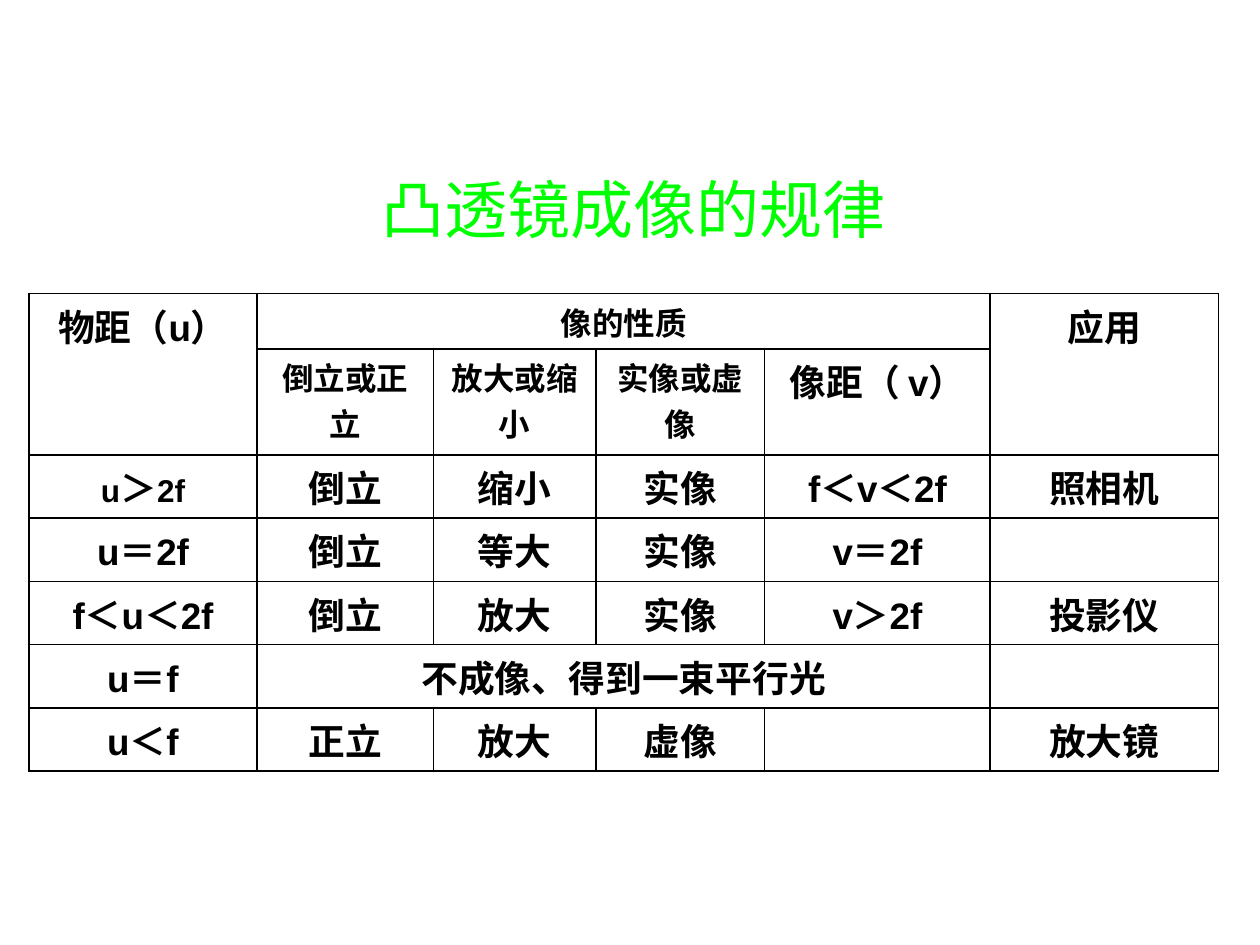
from dataclasses import dataclass

from lxml.etree import SubElement
from pptx import Presentation
from pptx.dml.color import RGBColor as RGB
from pptx.enum.text import MSO_ANCHOR as Anchor, MSO_AUTO_SIZE as Fit, PP_ALIGN as Align
from pptx.oxml.ns import qn
from pptx.util import Inches, Pt


@dataclass(frozen=True)
class Theme:
    ink: str = "000000"
    paper: str = "FFFFFF"
    title: str = "00FF00"
    latin: str = "Arial"
    cjk: str = "Noto Sans CJK SC"
    title_size: int = 36
    body: int = 21
    small: int = 18
    border: int = 1


T = Theme()
SLIDE_W, SLIDE_H = Inches(10), Inches(7.5)

COLUMNS = (1.81, 1.4, 1.29, 1.34, 1.79, 1.81)
ROWS = (0.4, 0.84, 0.46, 0.46, 0.46, 0.5, 0.46)
MERGES = (((0, 0), (1, 0)), ((0, 1), (0, 4)), ((0, 5), (1, 5)), ((5, 1), (5, 4)))
LENS_RULES = (
    ("物距（u）", "像的性质", "", "", "", "应用"),
    ("", "倒立或正立", "放大或缩小", "实像或虚像", "像距（ v）", ""),
    (("u", "＞", "2f"), "倒立", "缩小", "实像", "f＜v＜2f", "照相机"),
    ("u＝2f", "倒立", "等大", "实像", "v＝2f", ""),
    ("f＜u＜2f", "倒立", "放大", "实像", "v＞2f", "投影仪"),
    ("u＝f", "不成像、得到一束平行光", "", "", "", ""),
    ("u＜f", "正立", "放大", "虚像", "", "放大镜"),
)
SMALL_TEXTS = {"像的性质", "倒立或正立", "放大或缩小", "实像或虚像", "u", "2f"}


def add_run(p, text, size, color, font, bold):
    r = p.add_run()
    r.text = text
    r.font.size = Pt(size)
    r.font.name = font
    r.font.bold = bold
    r.font.color.rgb = RGB.from_string(color)
    ea = SubElement(r.font._element, qn("a:ea"))
    ea.set("typeface", T.cjk)


def set_borders(cell):
    tc_pr = cell._tc.get_or_add_tcPr()
    for i, side in enumerate(("lnL", "lnR", "lnT", "lnB")):
        ln = tc_pr.makeelement(qn(f"a:{side}"), {"w": str(Pt(T.border))})
        fill = SubElement(ln, qn("a:solidFill"))
        SubElement(fill, qn("a:srgbClr")).set("val", T.ink)
        tc_pr.insert(i, ln)


def fill_cell(cell, content):
    cell.margin_left = cell.margin_right = Inches(0.1)
    cell.margin_top = cell.margin_bottom = Inches(0.04)
    cell.vertical_anchor = Anchor.TOP
    cell.fill.solid()
    cell.fill.fore_color.rgb = RGB.from_string(T.paper)
    set_borders(cell)
    if not content:
        return
    p = cell.text_frame.paragraphs[0]
    p.alignment = Align.CENTER
    before = SubElement(p._p.get_or_add_pPr(), qn("a:spcBef"))
    SubElement(before, qn("a:spcPct")).set("val", "20000")
    for text in (content,) if isinstance(content, str) else content:
        size = T.small if text in SMALL_TEXTS else T.body
        add_run(p, text, size, T.ink, T.latin, True)


def add_title(s, x, y, w, h):
    sp = s.shapes.title
    sp.left, sp.top, sp.width, sp.height = x, y, w, h
    tf = sp.text_frame
    tf.word_wrap = False
    tf.auto_size = Fit.NONE
    tf.vertical_anchor = Anchor.TOP
    tf.margin_left = tf.margin_right = tf.margin_top = tf.margin_bottom = 0
    p = tf.paragraphs[0]
    p.alignment = Align.CENTER
    add_run(p, "凸透镜成像的规律", T.title_size, T.title, T.cjk, False)


def add_rules_table(s, x, y, w, h):
    table = s.shapes.add_table(len(ROWS), len(COLUMNS), x, y, w, h).table
    table.first_row = table.horz_banding = False
    for column, share in zip(table.columns, COLUMNS):
        column.width = int(w * share / sum(COLUMNS))
    for row, share in zip(table.rows, ROWS):
        row.height = int(h * share / sum(ROWS))
    for start, end in MERGES:
        table.cell(*start).merge(table.cell(*end))
    for i, texts in enumerate(LENS_RULES):
        for j, content in enumerate(texts):
            fill_cell(table.cell(i, j), content)


def main():
    prs = Presentation()
    prs.slide_width, prs.slide_height = SLIDE_W, SLIDE_H
    s = prs.slides.add_slide(prs.slide_layouts[5])
    add_rules_table(s, Inches(0.23), Inches(2.33), Inches(sum(COLUMNS)), Inches(sum(ROWS)))
    add_title(s, Inches(2.83), Inches(1.35), int(SLIDE_W * 0.44), int(SLIDE_H * 0.08))
    prs.save("out.pptx")


if __name__ == "__main__":
    main()
